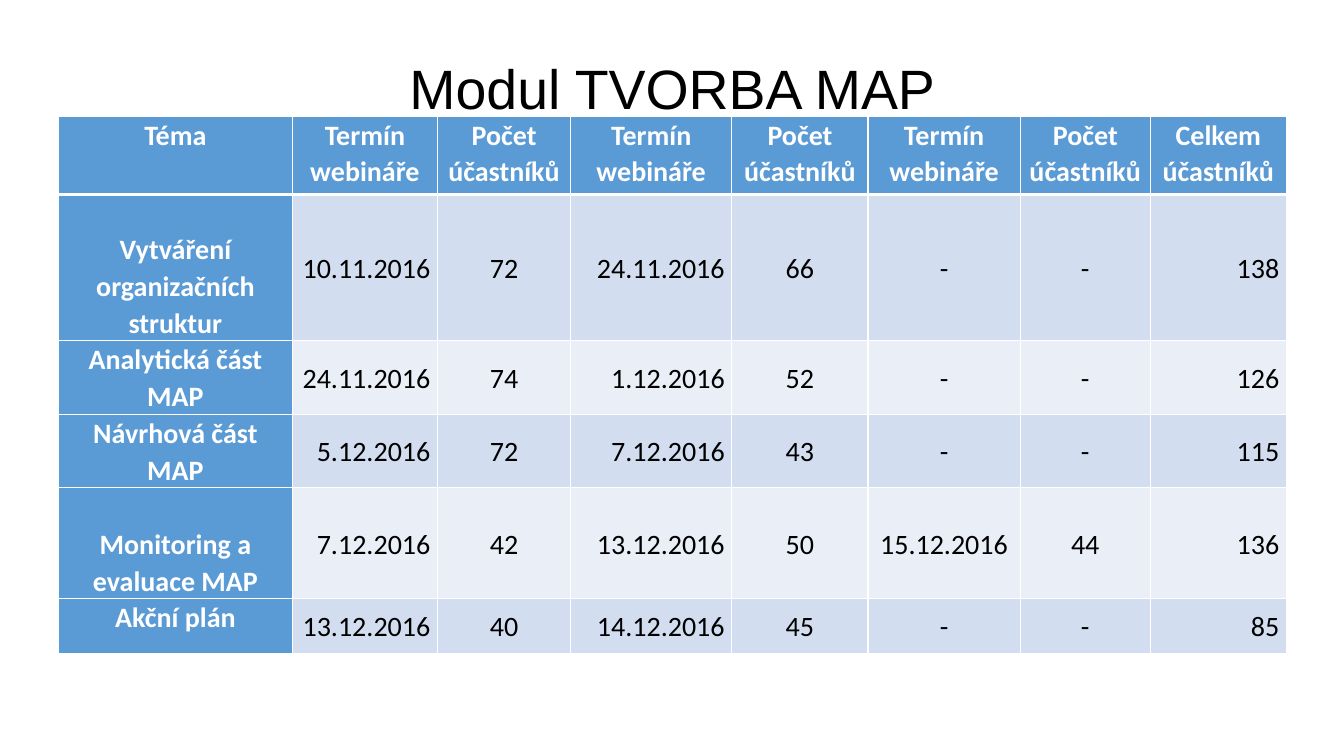
from dataclasses import dataclass

from lxml.etree import SubElement
from pptx import Presentation
from pptx.dml.color import RGBColor
from pptx.enum.text import MSO_ANCHOR, PP_ALIGN
from pptx.oxml.ns import qn
from pptx.util import Inches, Pt

HEADING = "Modul TVORBA MAP"
HEADERS = ["Téma", "Termín webináře", "Počet účastníků", "Termín webináře", "Počet účastníků",
           "Termín webináře", "Počet účastníků", "Celkem\núčastníků"]
TOPICS = [
    ("Vytváření organizačních struktur", "10.11.2016", "72", "24.11.2016", "66", "-", "-", "138"),
    ("Analytická část MAP", "24.11.2016", "74", "1.12.2016", "52", "-", "-", "126"),
    ("Návrhová část MAP", "5.12.2016", "72", "7.12.2016", "43", "-", "-", "115"),
    ("Monitoring a evaluace MAP", "7.12.2016", "42", "13.12.2016", "50", "15.12.2016", "44", "136"),
    ("Akční plán", "13.12.2016", "40", "14.12.2016", "45", "-", "-", "85"),
]
COLUMNS = [2.32, 1.44, 1.32, 1.6, 1.35, 1.51, 1.29, 1.35]
ROWS = [0.78, 1.45, 0.73, 0.73, 1.1, 0.54]
RIGHT_COLUMNS = {1, 3, 7}
LOW_LABEL_ROWS = {1, 4}


@dataclass(frozen=True)
class Theme:
    accent: str = "5B9BD5"
    bands: tuple = ("D2DEEF", "EAEFF7")
    light: str = "FFFFFF"
    dark: str = "000000"
    heading_font: str = "Arial"
    body_font: str = "Calibri"
    heading_size: float = 39.6
    body_size: float = 20
    rule: float = 1
    header_rule: float = 3


THEME = Theme()


def style(paragraph, font_name, size, color, bold, align):
    paragraph.alignment = align
    font = paragraph.font
    font.name, font.size, font.bold = font_name, Pt(size), bold
    font.color.rgb = RGBColor.from_string(color)


def draw_borders(cell, row):
    thick = {0: "lnB", 1: "lnT"}.get(row)
    properties = cell._tc.get_or_add_tcPr()
    for position, edge in enumerate(("lnL", "lnR", "lnT", "lnB")):
        width = THEME.header_rule if edge == thick else THEME.rule
        line = properties.makeelement(qn(f"a:{edge}"), {"w": str(Pt(width))})
        SubElement(SubElement(line, qn("a:solidFill")), qn("a:srgbClr"), val=THEME.light)
        properties.insert(position, line)


def fill_cell(cell, words, row, column):
    label = row == 0 or column == 0
    cell.text = words
    cell.margin_left = cell.margin_right = Inches(0.07)
    cell.margin_top = cell.margin_bottom = 0
    if not label:
        cell.vertical_anchor = MSO_ANCHOR.MIDDLE
    elif column == 0 and row in LOW_LABEL_ROWS:
        cell.vertical_anchor = MSO_ANCHOR.BOTTOM
    else:
        cell.vertical_anchor = MSO_ANCHOR.TOP
    cell.fill.solid()
    cell.fill.fore_color.rgb = RGBColor.from_string(
        THEME.accent if label else THEME.bands[(row - 1) % 2])
    align = PP_ALIGN.RIGHT if not label and column in RIGHT_COLUMNS else PP_ALIGN.CENTER
    for paragraph in cell.text_frame.paragraphs:
        paragraph.line_spacing = 1.07
        style(paragraph, THEME.body_font, THEME.body_size,
              THEME.light if label else THEME.dark, label, align)
    draw_borders(cell, row)


def add_heading(slide):
    frame = slide.shapes.add_textbox(
        Inches(0.92), Inches(0.43), Inches(11.5), Inches(1.45)).text_frame
    frame.word_wrap = True
    frame.vertical_anchor = MSO_ANCHOR.TOP
    frame.margin_top = Inches(0.11)
    frame.text = HEADING
    style(frame.paragraphs[0], THEME.heading_font, THEME.heading_size,
          THEME.dark, False, PP_ALIGN.CENTER)


def add_webinars(slide):
    webinars = slide.shapes.add_table(
        len(ROWS), len(COLUMNS), Inches(0.58), Inches(1.15),
        Inches(sum(COLUMNS)), Inches(sum(ROWS))).table
    for column, width in zip(webinars.columns, COLUMNS):
        column.width = Inches(width)
    for row, height in zip(webinars.rows, ROWS):
        row.height = Inches(height)
    for row, entries in enumerate([HEADERS, *TOPICS]):
        for column, words in enumerate(entries):
            fill_cell(webinars.cell(row, column), words, row, column)


def main():
    deck = Presentation()
    deck.slide_width, deck.slide_height = Inches(13.33), Inches(7.5)
    slide = deck.slides.add_slide(deck.slide_layouts[6])
    add_heading(slide)
    add_webinars(slide)
    deck.save("out.pptx")


if __name__ == "__main__":
    main()
